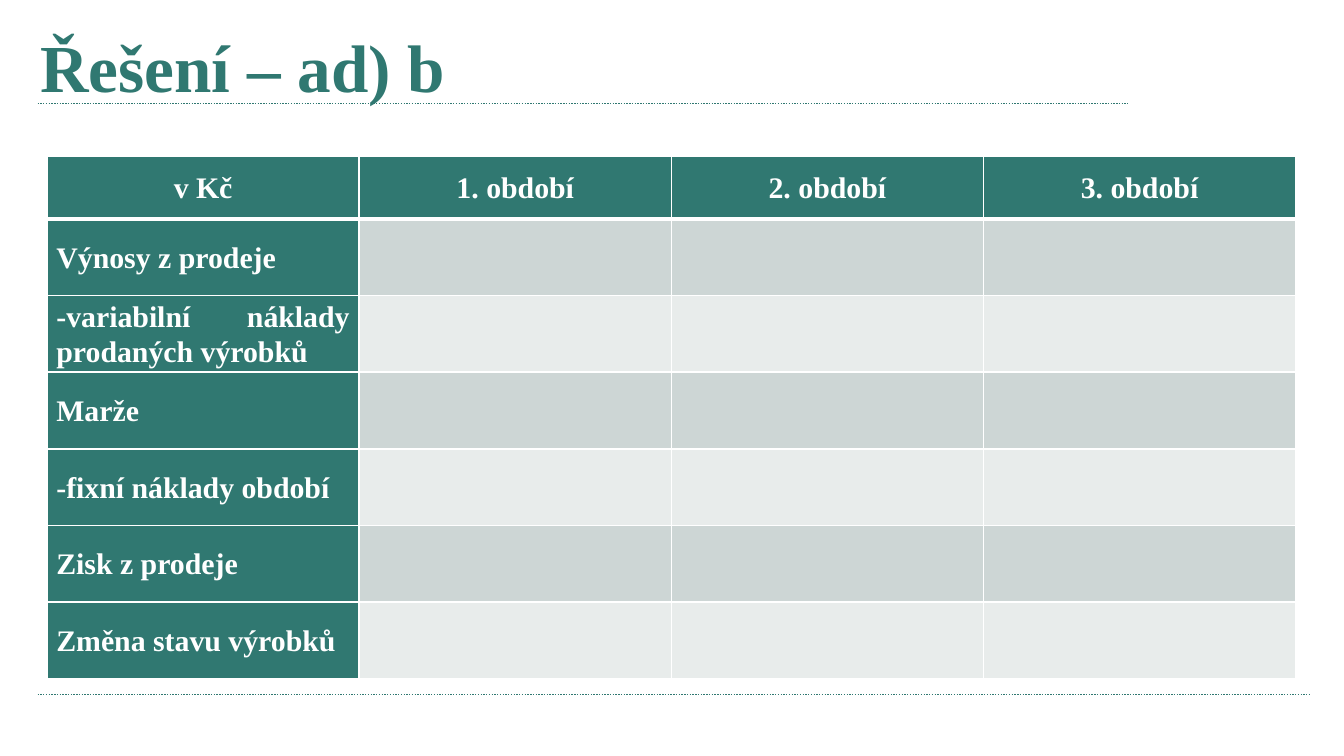
from dataclasses import dataclass

from lxml.etree import SubElement
from pptx import Presentation
from pptx.dml.color import RGBColor
from pptx.enum.dml import MSO_LINE
from pptx.enum.shapes import MSO_CONNECTOR
from pptx.enum.text import MSO_ANCHOR, PP_ALIGN
from pptx.oxml.ns import qn
from pptx.util import Inches, Pt


@dataclass(frozen=True)
class Theme:
    font: str = "Times New Roman"
    teal: str = "307871"
    white: str = "FFFFFF"
    bands: tuple = ("CDD6D5", "E8ECEB")
    title_size: int = 36
    table_size: int = 16


theme = Theme()


def write(tf, text, size, color, **paragraph_format):
    p = tf.paragraphs[0]
    for name, value in paragraph_format.items():
        setattr(p, name, value)
    r = p.add_run()
    r.text = text
    font = {"name": theme.font, "size": Pt(size), "bold": True}
    for name, value in font.items():
        setattr(r.font, name, value)
    r.font.color.rgb = RGBColor.from_string(color)


def add_border(cell, side, width):
    """Draw a white border; call before the cell's fill is set."""
    ln = SubElement(cell._tc.get_or_add_tcPr(), qn(f"a:ln{side}"), w=str(Pt(width)))
    fill = SubElement(ln, qn("a:solidFill"))
    SubElement(fill, qn("a:srgbClr"), val=theme.white)


prs = Presentation()
prs.slide_width, prs.slide_height = Inches(10), Inches(10 * 9 / 16)
s = prs.slides.add_slide(prs.slide_layouts[6])

# Dotted rules under the title and above the footer
for right, y in ((8.39, 0.77), (9.75, 5.17)):
    rule = s.shapes.add_connector(
        MSO_CONNECTOR.STRAIGHT, Inches(0.28), Inches(y), Inches(right), Inches(y))
    rule.line.color.rgb = RGBColor.from_string(theme.teal)
    rule.line.width = Pt(0.75)
    rule.line.dash_style = MSO_LINE.ROUND_DOT
    SubElement(rule._element.spPr, qn("a:effectLst"))

# Title
title = s.shapes.add_textbox(Inches(0.2), Inches(0.14), Inches(8.82), Inches(0.79))
tf = title.text_frame
tf.word_wrap = True
tf.vertical_anchor = MSO_ANCHOR.TOP
write(tf, "Řešení – ad) b", theme.title_size, theme.teal)

# Table: header row and label column are teal, the empty cells are banded
headers = ["v Kč", "1. období", "2. období", "3. období"]
labels = [
    "Výnosy z prodeje",
    "-variabilní náklady prodaných výrobků",
    "Marže",
    "-fixní náklady období",
    "Zisk z prodeje",
    "Změna stavu výrobků",
]
rows, cols = len(labels) + 1, len(headers)
table = s.shapes.add_table(
    rows, cols, Inches(0.35), Inches(1.16), Inches(9.29), Inches(3.9)).table
for column in table.columns:
    column.width = Inches(9.29 / cols)
for i, row in enumerate(table.rows):
    row.height = Inches(0.57 if i else 0.47)

cell_format = {
    "vertical_anchor": MSO_ANCHOR.MIDDLE,
    "margin_left": Inches(0.07),
    "margin_right": Inches(0.07),
    "margin_top": 0,
    "margin_bottom": 0,
}
for i in range(rows):
    for j in range(cols):
        cell = table.cell(i, j)
        for name, value in cell_format.items():
            setattr(cell, name, value)
        thick_side = {0: "B", 1: "T"}.get(i)
        for side in "LRTB":
            add_border(cell, side, 3 if side == thick_side else 1)

        is_label = i == 0 or j == 0
        color = theme.teal if is_label else theme.bands[(i - 1) % 2]
        cell.fill.solid()
        cell.fill.fore_color.rgb = RGBColor.from_string(color)
        if is_label:
            write(cell.text_frame, labels[i - 1] if i else headers[j],
                  theme.table_size, theme.white, line_spacing=1.07,
                  alignment=PP_ALIGN.JUSTIFY if i else PP_ALIGN.CENTER)

prs.save("out.pptx")
